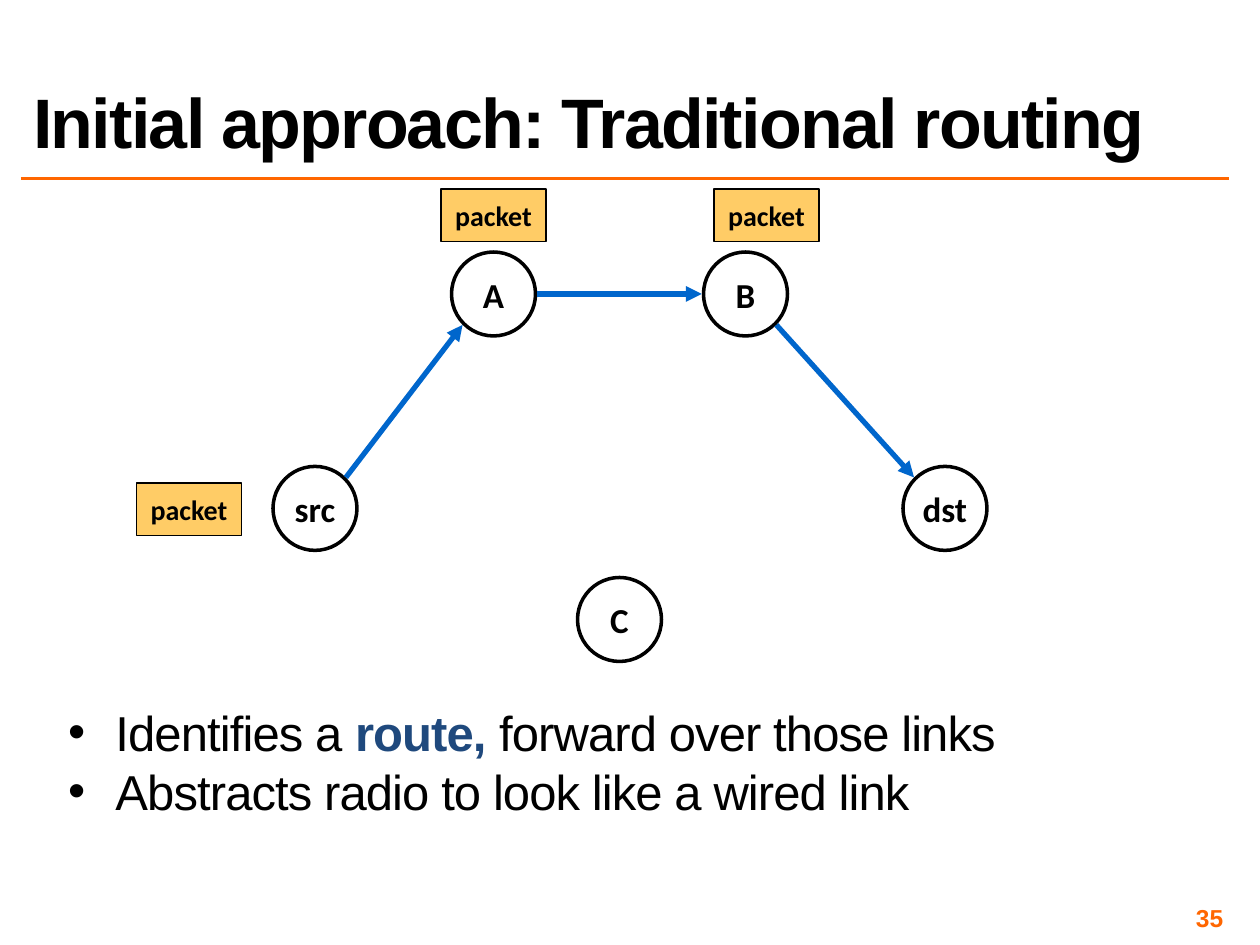
from math import sqrt

from lxml import etree
from pptx import Presentation
from pptx.dml.color import RGBColor
from pptx.enum.shapes import MSO_CONNECTOR, MSO_SHAPE
from pptx.enum.text import MSO_ANCHOR, PP_ALIGN
from pptx.oxml.ns import qn
from pptx.util import Pt

COLORS = {
    "ink": "000000",
    "accent": "FF6600",
    "packet": "FFCC66",
    "route": "0066CC",
    "emphasis": "1F497D",
}
NODE_SIZE = 48
PACKET_SIZE = (60, 30)

# Centres of the nodes and corners of the packets, relative to the network box
NODES = {
    "src": (102, 182.5),
    "A": (204, 60),
    "B": (348, 60),
    "dst": (462, 182.5),
    "C": (276, 246),
}
PACKETS = [(174, 0), (0, 168), (330, 0)]
# Each hop leaves and enters a node in these directions from its centre
DIAGONAL = 1 / sqrt(2)
HOPS = [
    ("src", (DIAGONAL, -DIAGONAL), "A", (-DIAGONAL, DIAGONAL)),
    ("A", (1, 0), "B", (-1, 0)),
    ("B", (DIAGONAL, DIAGONAL), "dst", (-DIAGONAL, -DIAGONAL)),
]
BULLETS = [
    [("Identifies a ", "ink", False), ("route,", "emphasis", True),
     (" forward over those links", "ink", False)],
    [("Abstracts radio to look like a wired link", "ink", False)],
]


def rgb(name):
    return RGBColor.from_string(COLORS[name])


def apply(target, formats):
    for attribute, value in formats.items():
        setattr(target, attribute, value)


def add_run(paragraph, text, size, color="ink", bold=True, font="Arial", spacing=0):
    run = paragraph.add_run()
    run.text = text
    apply(run.font, {"name": font, "size": Pt(size), "bold": bold})
    run.font.color.rgb = rgb(color)
    if spacing:
        run.font._element.set("spc", str(round(spacing * 100)))


def add_frame(slide, box, anchor, inset=None):
    frame = slide.shapes.add_textbox(*map(Pt, box)).text_frame
    apply(frame, {"word_wrap": True, "vertical_anchor": anchor})
    if inset is not None:
        sides = ("left", "top", "right", "bottom")
        apply(frame, {f"margin_{side}": Pt(inset) for side in sides})
    return frame


def add_line(slide, start, end, color, width, arrow=False):
    line = slide.shapes.add_connector(MSO_CONNECTOR.STRAIGHT, *map(Pt, (*start, *end)))
    line.line.color.rgb = rgb(color)
    line.line.width = Pt(width)
    properties = line._element.spPr
    if arrow:
        etree.SubElement(properties.find(qn("a:ln")), qn("a:tailEnd"), type="triangle")
    etree.SubElement(properties, qn("a:effectLst"))


def add_labelled(slide, kind, box, label, size, width, fill=None):
    shape = slide.shapes.add_shape(kind, *map(Pt, box))
    shape.shadow.inherit = False
    if fill:
        shape.fill.solid()
        shape.fill.fore_color.rgb = rgb(fill)
    else:
        shape.fill.background()
    shape.line.color.rgb = rgb("ink")
    shape.line.width = Pt(width)
    frame = shape.text_frame
    apply(frame, {"word_wrap": False, "vertical_anchor": MSO_ANCHOR.MIDDLE})
    frame.paragraphs[0].alignment = PP_ALIGN.CENTER
    add_run(frame.paragraphs[0], label, size, font="Calibri")


def add_title(slide, box):
    left, top, width, height = box
    rule_y = top + height + 6
    add_line(slide, (left, rule_y), (left + width, rule_y), "accent", 2)
    title = add_frame(slide, box, MSO_ANCHOR.BOTTOM).paragraphs[0]
    title.line_spacing = 0.8
    add_run(title, "Initial approach: Traditional routing", 40, spacing=-1)


def add_network(slide, box):
    left, top = box[:2]
    radius = NODE_SIZE / 2

    # Packets
    for x, y in PACKETS:
        add_labelled(slide, MSO_SHAPE.RECTANGLE, (left + x, top + y, *PACKET_SIZE),
                     "packet", 16, 0.75, "packet")

    # Nodes
    for label, (x, y) in NODES.items():
        node_box = (left + x - radius, top + y - radius, NODE_SIZE, NODE_SIZE)
        add_labelled(slide, MSO_SHAPE.OVAL, node_box, label, 20, 2)

    # Hops along the route
    def rim(label, direction):
        x, y = NODES[label]
        dx, dy = direction
        return left + x + (radius + 1) * dx, top + y + (radius + 1) * dy

    for sender, exit_side, receiver, entry_side in HOPS:
        add_line(slide, rim(sender, exit_side), rim(receiver, entry_side),
                 "route", 3, arrow=True)


def add_bullets(slide, box):
    frame = add_frame(slide, box, MSO_ANCHOR.TOP, inset=3)
    for index, runs in enumerate(BULLETS):
        bullet = frame.add_paragraph() if index else frame.paragraphs[0]
        apply(bullet, {"line_spacing": 0.8, "space_before": Pt(6.5)})
        properties = bullet._p.get_or_add_pPr()
        properties.set("marL", str(Pt(27)))
        properties.set("indent", str(-Pt(27)))
        etree.SubElement(properties, qn("a:buFont"), typeface="Arial")
        etree.SubElement(properties, qn("a:buChar"), char="•")
        for text, color, bold in runs:
            add_run(bullet, text, 28, color, bold, spacing=-0.5)


def add_page_number(slide, box):
    number = add_frame(slide, box, MSO_ANCHOR.MIDDLE, inset=3).paragraphs[0]
    number.alignment = PP_ALIGN.RIGHT
    add_run(number, "35", 14, "accent")


def main():
    deck = Presentation()
    apply(deck, {"slide_width": Pt(720), "slide_height": Pt(540)})
    slide = deck.slides.add_slide(deck.slide_layouts[6])
    add_title(slide, (12, 12, 690, 84))
    add_network(slide, (78, 108, 486, 270))
    add_bullets(slide, (36, 405, 648, 99))
    add_page_number(slide, (534, 516, 168, 17))
    deck.save("out.pptx")


if __name__ == "__main__":
    main()
